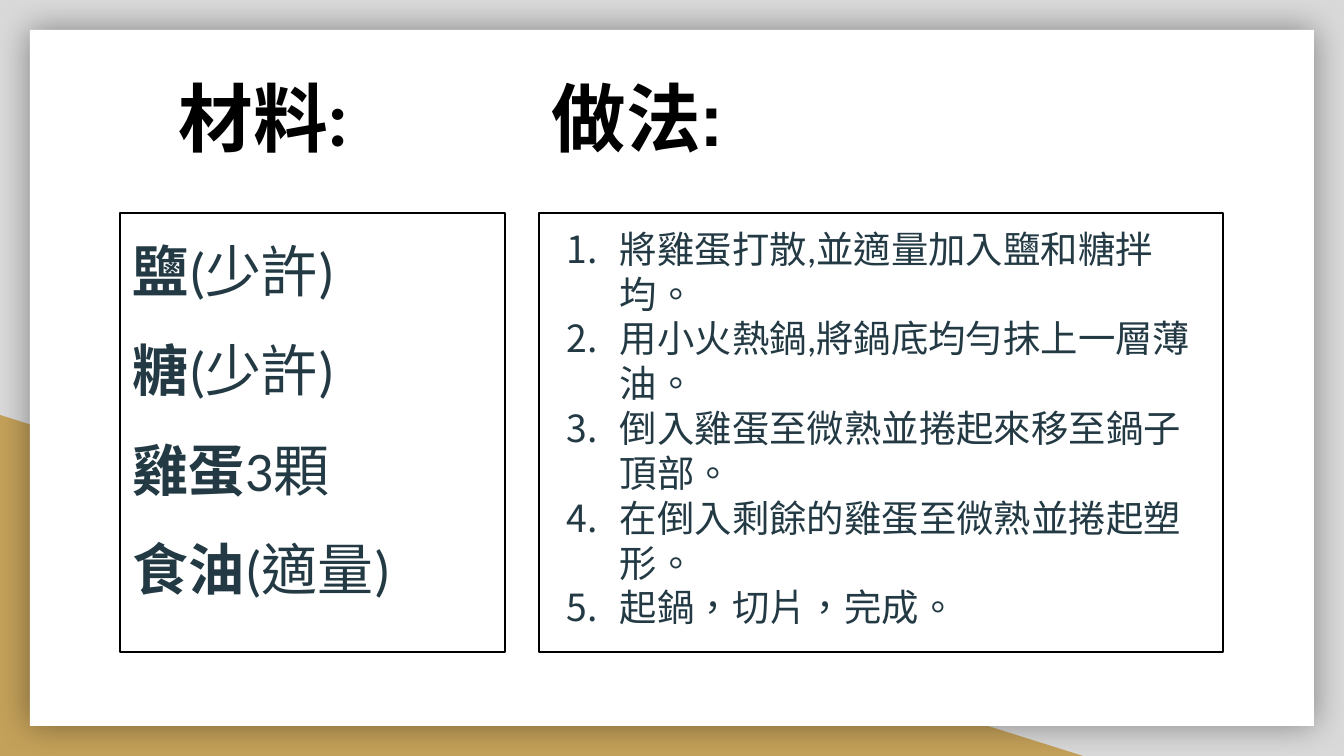
from lxml import etree
from pptx import Presentation
from pptx.dml.color import RGBColor
from pptx.enum.lang import MSO_LANGUAGE_ID
from pptx.enum.shapes import MSO_SHAPE
from pptx.enum.text import MSO_ANCHOR, PP_ALIGN
from pptx.oxml.ns import qn
from pptx.util import Pt

RECTANGLE = MSO_SHAPE.RECTANGLE
RIGHT_TRIANGLE = MSO_SHAPE.RIGHT_TRIANGLE
TOP = MSO_ANCHOR.TOP
LEFT = PP_ALIGN.LEFT
CHINESE = MSO_LANGUAGE_ID.TRADITIONAL_CHINESE

WIDTH, HEIGHT = 1344, 756
EMU_PER_PX = 9144000 / WIDTH
INSET = 13
INK = "233A44"
BLACK = "000000"

INGREDIENTS = [("鹽", "(少許)"), ("糖", "(少許)"), ("雞蛋", "3顆"), ("食油", "(適量)")]
STEPS = [
    "將雞蛋打散,並適量加入鹽和糖拌均。",
    "用小火熱鍋,將鍋底均勻抹上一層薄油。",
    "倒入雞蛋至微熟並捲起來移至鍋子頂部。",
    "在倒入剩餘的雞蛋至微熟並捲起塑形。",
    "起鍋，切片，完成。",
]


def px(length):
    """Turn px into EMU."""
    return round(length * EMU_PER_PX)


def color(code):
    """Turn a hex string into a colour."""
    return RGBColor.from_string(code)


def add_panel(slide, box, preset=RECTANGLE, fill=None, line=None):
    """Add a preset shape with an optional fill and outline."""
    panel = slide.shapes.add_shape(preset, *map(px, box))
    panel.shadow.inherit = False
    if fill:
        panel.fill.solid()
        panel.fill.fore_color.rgb = color(fill)
    else:
        panel.fill.background()
    if line:
        panel.line.color.rgb = color(line)
        panel.line.width = Pt(0.75)
    else:
        panel.line.fill.background()
    return panel


def prepare_frame(holder):
    """Set the wrapping, anchor and insets of a text frame."""
    frame = holder.text_frame
    frame.word_wrap = True
    frame.vertical_anchor = TOP
    frame.margin_left = frame.margin_right = px(INSET)
    frame.margin_top = frame.margin_bottom = px(INSET)
    return frame


def next_paragraph(frame, index):
    """Return a left-aligned paragraph for the given index."""
    paragraph = frame.add_paragraph() if index else frame.paragraphs[0]
    paragraph.alignment = LEFT
    return paragraph


def add_text(paragraph, text, size=20, font="Calibri", ink=INK, bold=False):
    """Add a formatted run of Traditional Chinese to a paragraph."""
    run = paragraph.add_run()
    run.text = text
    run.font.size = Pt(size)
    run.font.name = font
    run.font.bold = bold
    run.font.color.rgb = color(ink)
    run.font.language_id = CHINESE


def number_paragraph(paragraph, indent, hanging):
    """Give a paragraph numbering, a hanging indent and no hanging punctuation."""
    properties = paragraph._p.get_or_add_pPr()
    properties.set("marL", str(px(indent)))
    properties.set("indent", str(-px(hanging)))
    properties.set("hangingPunct", "0")
    bullet_color = etree.SubElement(properties, qn("a:buClr"))
    etree.SubElement(bullet_color, qn("a:srgbClr"), val=INK)
    etree.SubElement(properties, qn("a:buAutoNum"), type="arabicPeriod")


def add_glow(panel, blur, opacity):
    """Put a soft black shadow around a panel."""
    effects = panel._element.spPr.find(qn("a:effectLst"))
    shadow = etree.SubElement(effects, qn("a:outerShdw"), blurRad=str(Pt(blur)),
                              dist="0", dir="0", algn="ctr", rotWithShape="0")
    tint = etree.SubElement(shadow, qn("a:srgbClr"), val=BLACK)
    etree.SubElement(tint, qn("a:alpha"), val=str(opacity * 1000))


def add_backdrop(slide, box):
    """Draw the grey ground, gold corner and white card in the box."""
    left, top, width, height = box
    slide.background.fill.solid()
    slide.background.fill.fore_color.rgb = color("D9D9D9")
    add_panel(slide, (left, top + height - 341, 1083, 341), RIGHT_TRIANGLE, "C4A15A")
    card = add_panel(slide, (left + 30, top + 30, width - 60, height - 60), fill="FFFFFF")
    add_glow(card, 18, 40)


def add_heading(slide, box, text, font):
    """Place a bold heading in the box."""
    heading = slide.shapes.add_textbox(*map(px, box))
    paragraph = next_paragraph(prepare_frame(heading), 0)
    add_text(paragraph, text, size=40, font=font, ink=BLACK, bold=True)


def add_ingredients(slide, box):
    """List each ingredient with its amount in an outlined box."""
    frame = prepare_frame(add_panel(slide, box, line=BLACK))
    for index, (ingredient, amount) in enumerate(INGREDIENTS):
        paragraph = next_paragraph(frame, index)
        paragraph.line_spacing = 1.15
        paragraph.space_before = Pt(12 if index else 0)
        add_text(paragraph, ingredient, size=30, bold=True)
        add_text(paragraph, amount, size=30)


def add_steps(slide, box):
    """List the numbered cooking steps in an outlined box."""
    frame = prepare_frame(add_panel(slide, box, line=BLACK))
    for index, step in enumerate(STEPS):
        paragraph = next_paragraph(frame, index)
        number_paragraph(paragraph, 68, 53)
        add_text(paragraph, step)


def main():
    """Build and save the recipe slide."""
    deck = Presentation()
    deck.slide_width, deck.slide_height = px(WIDTH), px(HEIGHT)
    slide = deck.slides.add_slide(deck.slide_layouts[6])
    add_backdrop(slide, (0, 0, WIDTH, HEIGHT))
    add_heading(slide, (539, 59, 640, 93), "做法:", "TeX Gyre Adventor")
    add_ingredients(slide, (120, 213, 385, 439))
    add_steps(slide, (539, 213, 684, 439))
    add_heading(slide, (166, 59, 452, 93), "材料:", "Lato")
    deck.save("out.pptx")


if __name__ == "__main__":
    main()
